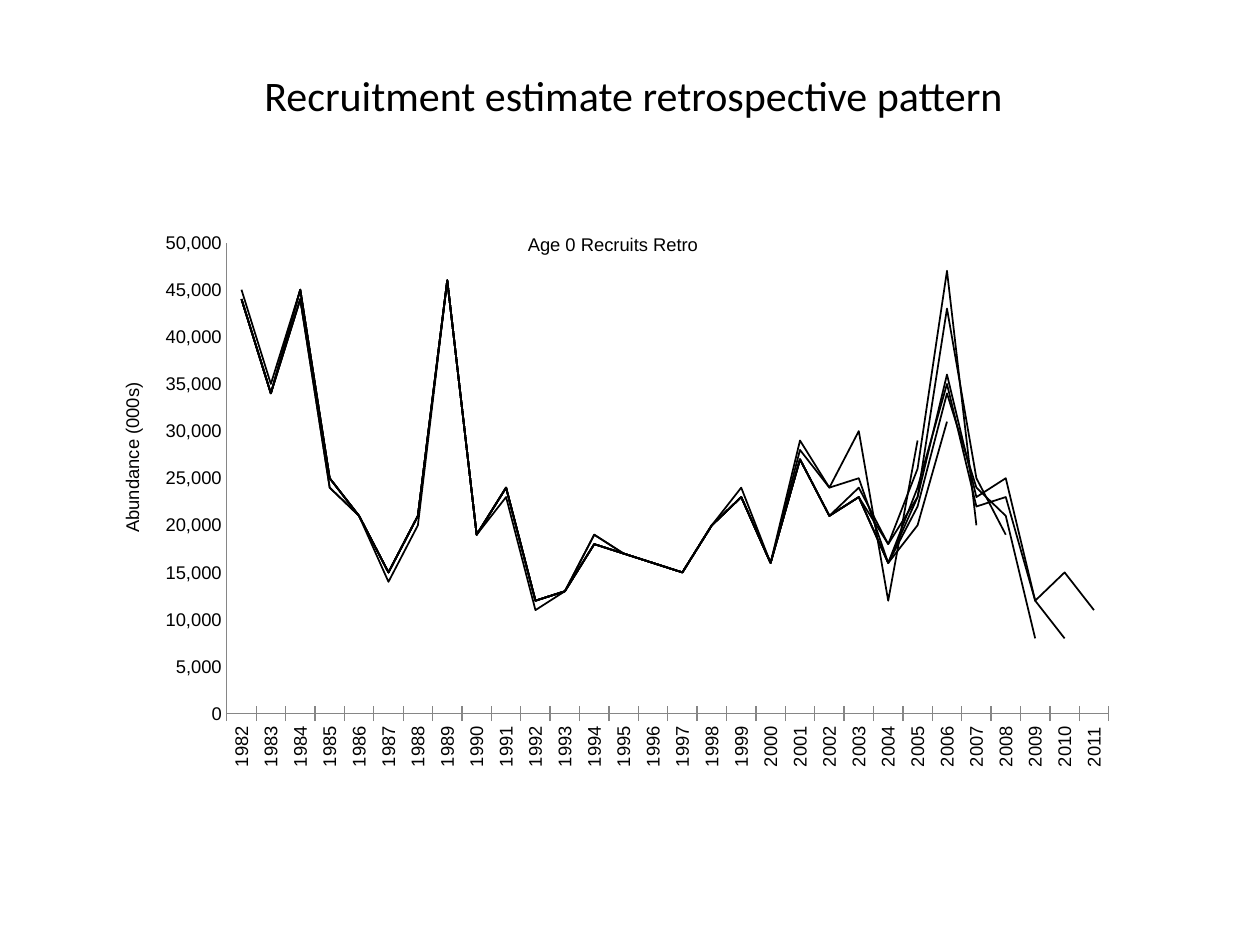
"""Build a slide with a line chart of recruitment estimates by year."""
from dataclasses import dataclass

from lxml import etree
from pptx import Presentation
from pptx.chart.data import CategoryChartData
from pptx.dml.color import RGBColor
from pptx.enum.chart import XL_CHART_TYPE, XL_TICK_MARK
from pptx.oxml.ns import qn
from pptx.util import Inches, Pt

LINE = XL_CHART_TYPE.LINE
CROSS = XL_TICK_MARK.CROSS
NO_TICK = XL_TICK_MARK.NONE
UPRIGHT = "-5400000"


@dataclass(frozen=True)
class Theme:
    """Colours, fonts and sizes of the slide."""
    ink: RGBColor = RGBColor(0, 0, 0)
    rule: RGBColor = RGBColor(0x86, 0x86, 0x86)
    head: str = "Calibri"
    body: str = "Arial"
    large: Pt = Pt(24)
    small: Pt = Pt(10.5)
    thin: Pt = Pt(1)
    hair: Pt = Pt(0.75)


@dataclass(frozen=True)
class Run:
    """One retrospective run, in thousands from the first year on."""
    name: str
    vals: tuple[int, ...]


THEME = Theme()
YEARS = [str(year) for year in range(1982, 2012)]
RUNS = [
    Run("Series 1", (44, 34, 45, 25, 21, 15, 21, 46, 19, 24, 12, 13, 19, 17, 16,
                     15, 20, 23, 16, 29, 24, 30, 12, 29)),
    Run("Series 2", (44, 34, 45, 25, 21, 15, 21, 46, 19, 24, 12, 13, 19, 17, 16,
                     15, 20, 24, 16, 28, 24, 25, 16, 20, 31)),
    Run("Series 3", (44, 34, 44, 25, 21, 15, 21, 46, 19, 24, 12, 13, 18, 17, 16,
                     15, 20, 23, 16, 27, 21, 24, 18, 26, 47, 20)),
    Run("Series 4", (44, 34, 44, 24, 21, 15, 21, 46, 19, 24, 12, 13, 18, 17, 16,
                     15, 20, 23, 16, 27, 21, 23, 18, 23, 43, 25, 19)),
    Run("Series 5", (44, 34, 44, 24, 21, 14, 20, 46, 19, 23, 11, 13, 18, 17, 16,
                     15, 20, 23, 16, 27, 21, 23, 16, 22, 34, 24, 21, 8)),
    Run("Series 6", (44, 34, 45, 25, 21, 15, 21, 46, 19, 24, 12, 13, 18, 17, 16,
                     15, 20, 23, 16, 27, 21, 23, 16, 23, 36, 23, 25, 12, 8)),
    Run("Series 7", (45, 35, 45, 25, 21, 15, 21, 46, 19, 24, 12, 13, 18, 17, 16,
                     15, 20, 23, 16, 27, 21, 23, 16, 24, 35, 22, 23, 12, 15, 11)),
]


def style(font, size: Pt, face: str) -> None:
    """Set a plain font in the ink colour."""
    font.size, font.name, font.bold = size, face, False
    font.color.rgb = THEME.ink


def write(frame, text: str, size: Pt, face: str) -> None:
    """Add one run to the first paragraph."""
    run = frame.paragraphs[0].add_run()
    run.text = text
    style(run.font, size, face)


def place(node, index: int, **parts: str | float) -> None:
    """Give a chart part a manual layout."""
    for old in node.findall(qn("c:layout")):
        node.remove(old)
    layout = etree.Element(qn("c:layout"))
    manual = etree.SubElement(layout, qn("c:manualLayout"))
    for tag, val in parts.items():
        etree.SubElement(manual, qn(f"c:{tag}")).set("val", str(val))
    node.insert(index, layout)


def label(title, text: str, left: float, top: float) -> None:
    """Write a chart or axis title at a share of the chart area."""
    write(title.text_frame, text, THEME.small, THEME.body)
    place(title._element, 1, xMode="edge", yMode="edge", x=left, y=top)


def add_head(slide, text: str) -> None:
    """Add the slide heading."""
    box = slide.shapes.add_textbox(Inches(2), Inches(0.5), Inches(6.08), Inches(0.5))
    box.text_frame.word_wrap = True
    write(box.text_frame, text, THEME.large, THEME.head)


def add_lines(slide, runs: list[Run]) -> None:
    """Add the line chart with its axes and titles."""
    data = CategoryChartData(number_format="#,##0")
    data.categories = YEARS
    for run in runs:
        data.add_series(run.name, [val * 1000 for val in run.vals])
    chart = slide.shapes.add_chart(
        LINE, Inches(0.75), Inches(1.33), Inches(8.75), Inches(5.42), data).chart
    style(chart.font, THEME.small, THEME.body)
    chart.has_legend = False
    chart.has_title = True
    label(chart.chart_title, "Age 0 Recruits Retro", 0.39, 0.09)
    place(chart._chartSpace.chart.plotArea, 0, layoutTarget="inner",
          xMode="edge", yMode="edge", x=0.12, y=0.11, w=0.8, h=0.69)
    chart.plots[0].vary_by_categories = False
    for line in chart.plots[0].series:
        line.smooth = False
        line.format.line.color.rgb = THEME.ink
        line.format.line.width = THEME.thin
    years, count = chart.category_axis, chart.value_axis
    for axis, tick in ((years, CROSS), (count, NO_TICK)):
        axis.has_major_gridlines = False
        axis.major_tick_mark, axis.minor_tick_mark = tick, NO_TICK
        axis.format.line.color.rgb = THEME.rule
        axis.format.line.width = THEME.hair
        style(axis.tick_labels.font, THEME.small, THEME.body)
    years._element.txPr.bodyPr.set("rot", UPRIGHT)
    count.minimum_scale, count.maximum_scale, count.major_unit = 0, 50000, 5000
    count.tick_labels.number_format = "#,##0"
    count.tick_labels.number_format_is_linked = False
    label(count.axis_title, "Abundance (000s)", 0.02, 0.31)
    count.axis_title.text_frame._txBody.bodyPr.set("rot", UPRIGHT)


def main() -> None:
    """Build and save the slide."""
    deck = Presentation()
    deck.slide_width, deck.slide_height = Inches(10), Inches(7.5)
    slide = deck.slides.add_slide(deck.slide_layouts[6])
    add_lines(slide, RUNS)
    add_head(slide, "Recruitment estimate retrospective pattern")
    deck.save("out.pptx")


if __name__ == "__main__":
    main()
